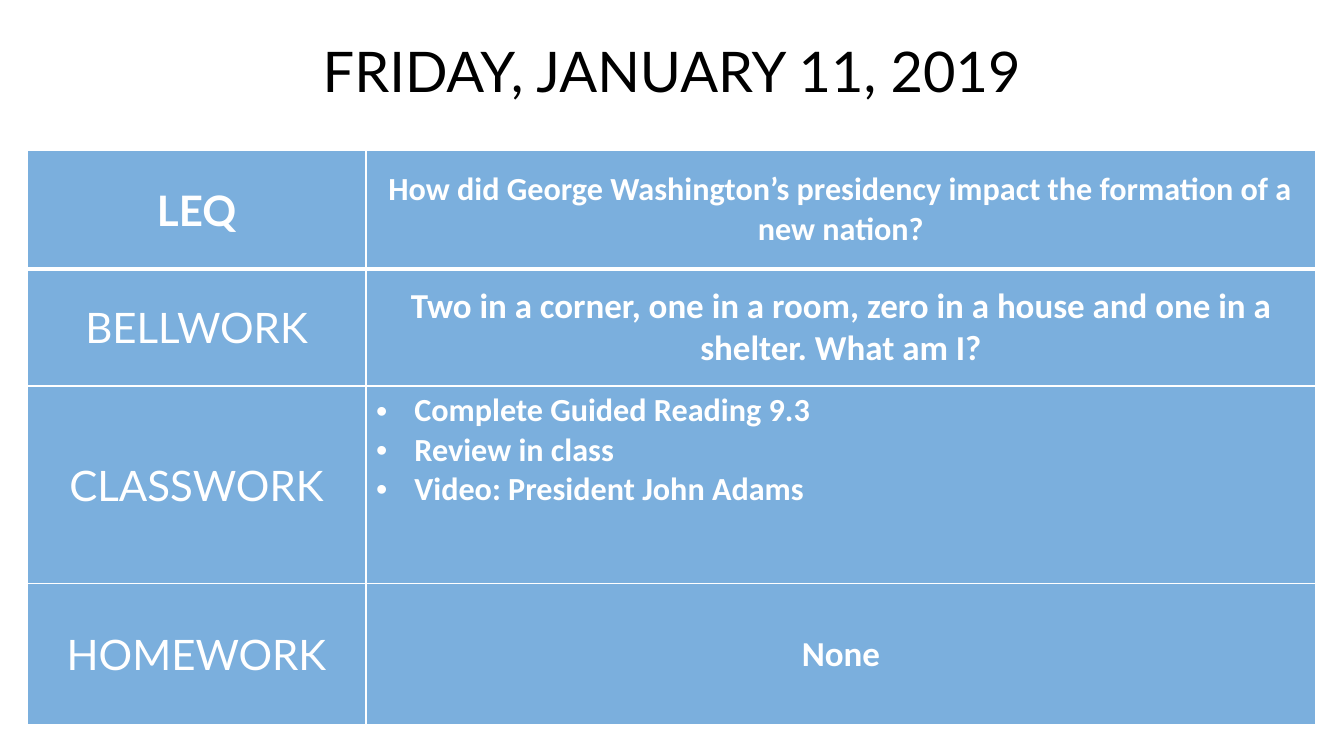
from pptx import Presentation
from pptx.dml.color import RGBColor
from pptx.enum.shapes import MSO_SHAPE as SHAPE
from pptx.enum.text import MSO_ANCHOR as ANCHOR, PP_ALIGN as ALIGN
from pptx.oxml.ns import qn
from pptx.util import Inches, Pt
from lxml.etree import SubElement

WHITE = RGBColor(0xFF, 0xFF, 0xFF)
BLACK = RGBColor(0x00, 0x00, 0x00)
BLUE = RGBColor(0x5B, 0x9B, 0xD5)

LEFT, WIDTH = 0.27, 12.78
COLS = [3.36, 9.42]
# Row height, label, answer lines, answer size
AGENDA = [
    (1.18, "LEQ", ["How did George Washington’s presidency impact "
                   "the formation of a new nation?"], 23),
    (1.16, "BELLWORK", ["Two in a corner, one in a room, zero in a house "
                        "and one in a shelter. What am I?"], 25),
    (1.96, "CLASSWORK", ["Complete Guided Reading 9.3", "Review in class",
                         "Video: President John Adams"], 23),
    (1.4, "HOMEWORK", ["None"], 25),
]


def write(tf, lines, size=23, font="Calibri", color=WHITE, bold=False, bullets=False):
    """Fill a text frame with one paragraph per line."""
    tf.word_wrap = True
    for i, line in enumerate(lines):
        p = tf.add_paragraph() if i else tf.paragraphs[0]
        p.alignment = ALIGN.LEFT if bullets else ALIGN.CENTER
        if bullets:
            pPr = p._p.get_or_add_pPr()
            pPr.set("marL", str(Inches(0.38)))
            pPr.set("indent", str(-Inches(0.38)))
            SubElement(pPr, qn("a:buFont"), typeface="Arial")
            SubElement(pPr, qn("a:buChar"), char="•")
        r = p.add_run()
        r.text = line
        r.font.size, r.font.name, r.font.bold = Pt(size), font, bold
        r.font.color.rgb = color


class Deck:
    def __init__(self, prs):
        self.font = "Lato"
        self.slide = prs.slides.add_slide(prs.slide_layouts[6])

    def paint(self, fill, color, opacity):
        fill.solid()
        fill.fore_color.rgb = color
        clr = fill._xPr.find(qn("a:solidFill"))[0]
        SubElement(clr, qn("a:alpha"), val=str(opacity * 1000))

    def border(self, cell, bottom):
        tcPr = cell._tc.get_or_add_tcPr()
        widths = {"L": 1, "R": 1, "T": 1, "B": bottom}
        for i, (side, width) in enumerate(widths.items()):
            ln = SubElement(tcPr, qn(f"a:ln{side}"), w=str(Pt(width)))
            fill = SubElement(ln, qn("a:solidFill"))
            SubElement(fill, qn("a:srgbClr"), val=str(WHITE))
            tcPr.insert(i, ln)  # borders come before the cell fill

    def title(self, text, top, height):
        sp = self.slide.shapes.add_shape(
            SHAPE.RECTANGLE, Inches(LEFT), Inches(top), Inches(WIDTH), Inches(height))
        sp.shadow.inherit = False
        sp.line.fill.background()
        self.paint(sp.fill, WHITE, 65)
        sp.text_frame.vertical_anchor = ANCHOR.MIDDLE
        write(sp.text_frame, [text], size=40, font=self.font, color=BLACK)

    def agenda(self, rows, top):
        height = sum(row[0] for row in rows)
        table = self.slide.shapes.add_table(
            len(rows), len(COLS), Inches(LEFT), Inches(top),
            Inches(WIDTH), Inches(height)).table
        for col, width in zip(table.columns, COLS):
            col.width = Inches(width)
        for i, (height, label, lines, size) in enumerate(rows):
            table.rows[i].height = Inches(height)
            bullets = len(lines) > 1
            name, answer = table.rows[i].cells
            for cell in (name, answer):
                self.paint(cell.fill, BLUE, 80)
                self.border(cell, bottom=1 if i else 3)
                cell.vertical_anchor = ANCHOR.MIDDLE
            if bullets:
                answer.vertical_anchor = ANCHOR.TOP
            write(name.text_frame, [label], size=30, font=self.font, bold=i == 0)
            write(answer.text_frame, lines, size=size, bold=True, bullets=bullets)


def main():
    prs = Presentation()
    prs.slide_width, prs.slide_height = Inches(13.33), Inches(7.5)
    deck = Deck(prs)
    deck.agenda(AGENDA, top=1.49)
    deck.title("FRIDAY, JANUARY 11, 2019", top=0.2, height=1)
    prs.save("out.pptx")


if __name__ == "__main__":
    main()
